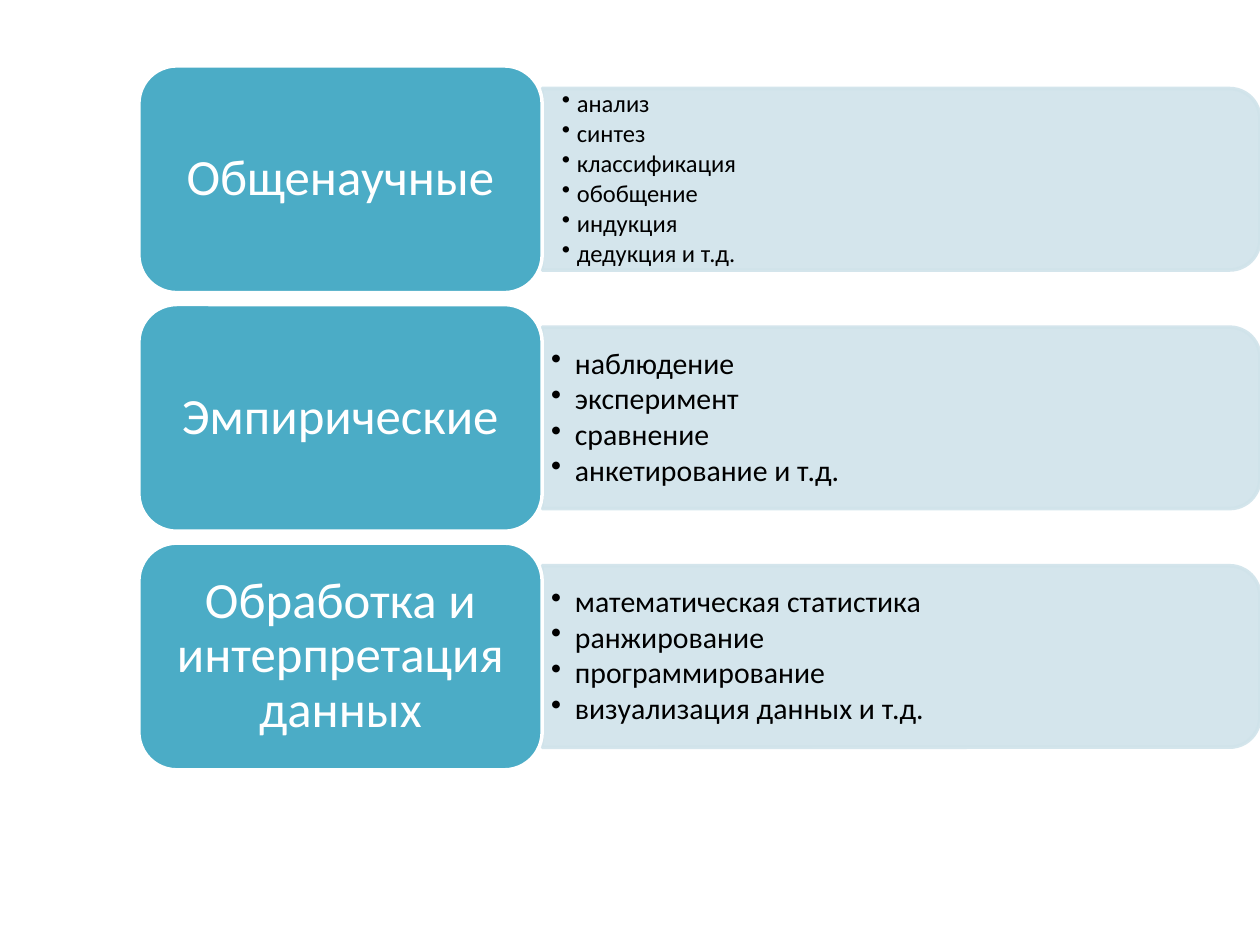
from lxml import etree
from pptx import Presentation
from pptx.dml.color import RGBColor
from pptx.enum.shapes import MSO_SHAPE
from pptx.enum.text import MSO_ANCHOR, PP_ALIGN
from pptx.oxml.ns import qn
from pptx.util import Cm, Pt

ROUNDED = MSO_SHAPE.ROUNDED_RECTANGLE
TOP_ROUNDED = MSO_SHAPE.ROUND_2_SAME_RECTANGLE
MIDDLE = MSO_ANCHOR.MIDDLE
CENTER = PP_ALIGN.CENTER

TEAL = RGBColor(0x4B, 0xAC, 0xC6)
PALE_BLUE = RGBColor(0xD0, 0xE3, 0xEA)
WHITE = RGBColor(0xFF, 0xFF, 0xFF)
BLACK = RGBColor(0x00, 0x00, 0x00)
FONT = "Calibri"

# Heading, methods, text size, bullet indent, side inset, top inset
GROUPS = [
    ("Общенаучные",
     ["анализ", "синтез", "классификация", "обобщение", "индукция", "дедукция и т.д."],
     14, 0.3, 0.4, 0.2),
    ("Эмпирические",
     ["наблюдение", "эксперимент", "сравнение", "анкетирование и т.д."],
     17, 0.48, 0.18, 0.1),
    ("Обработка и интерпретация данных",
     ["математическая статистика", "ранжирование", "программирование",
      "визуализация данных и т.д."],
     17, 0.48, 0.18, 0.1),
]

LEFT, TOP, ROW_STEP = 2.8, 1.33, 4.81
HEADING_WIDTH, HEADING_HEIGHT = 8.13, 4.57
PANEL_LENGTH, PANEL_HEIGHT = 14.47, 3.66
LIST_WIDTH, LIST_HEIGHT = 14.3, 3.3


def style_shape(shape, fill_color, line_color):
    shape.shadow.inherit = False
    shape.fill.solid()
    shape.fill.fore_color.rgb = fill_color
    shape.line.color.rgb = line_color
    shape.line.width = Pt(2)


def set_frame(text_frame, side_inset, top_inset):
    text_frame.word_wrap = True
    text_frame.vertical_anchor = MIDDLE
    text_frame.margin_left = text_frame.margin_right = Cm(side_inset)
    text_frame.margin_top = text_frame.margin_bottom = Cm(top_inset)


presentation = Presentation()
presentation.slide_width = Cm(25.4)
presentation.slide_height = Cm(19.05)
slide = presentation.slides.add_slide(presentation.slide_layouts[6])

panel_left = LEFT + HEADING_WIDTH
for row, (heading, methods, size, indent, side_inset, top_inset) in enumerate(GROUPS):
    top = TOP + row * ROW_STEP
    middle = top + HEADING_HEIGHT / 2

    # The panel stands upright and is turned so its round corners face right
    panel = slide.shapes.add_shape(
        TOP_ROUNDED,
        Cm(panel_left + (PANEL_LENGTH - PANEL_HEIGHT) / 2), Cm(middle - PANEL_LENGTH / 2),
        Cm(PANEL_HEIGHT), Cm(PANEL_LENGTH))
    panel.rotation = 90
    style_shape(panel, PALE_BLUE, PALE_BLUE)
    for color in panel._element.spPr.iter(qn("a:srgbClr")):
        etree.SubElement(color, qn("a:alpha"), val="90000")

    method_list = slide.shapes.add_textbox(
        Cm(panel_left), Cm(middle - LIST_HEIGHT / 2), Cm(LIST_WIDTH), Cm(LIST_HEIGHT))
    text_frame = method_list.text_frame
    set_frame(text_frame, side_inset, top_inset)
    text_frame.text = "\n".join(methods)
    for paragraph in text_frame.paragraphs:
        paragraph.level = 1
        paragraph.line_spacing = 0.9
        paragraph.space_after = Pt(2)
        properties = paragraph._p.get_or_add_pPr()
        properties.set("marL", str(Cm(indent)))
        properties.set("indent", str(-Cm(indent)))
        etree.SubElement(properties, qn("a:buChar"), char="•")
        paragraph.font.name = FONT
        paragraph.font.size = Pt(size)
        paragraph.font.color.rgb = BLACK

    heading_box = slide.shapes.add_shape(
        ROUNDED, Cm(LEFT), Cm(top), Cm(HEADING_WIDTH), Cm(HEADING_HEIGHT))
    style_shape(heading_box, TEAL, WHITE)
    set_frame(heading_box.text_frame, 0.3, 0.15)
    heading_box.text_frame.text = heading
    paragraph = heading_box.text_frame.paragraphs[0]
    paragraph.alignment = CENTER
    paragraph.line_spacing = 0.9
    paragraph.font.name = FONT
    paragraph.font.size = Pt(29)
    paragraph.font.color.rgb = WHITE

presentation.save("out.pptx")
